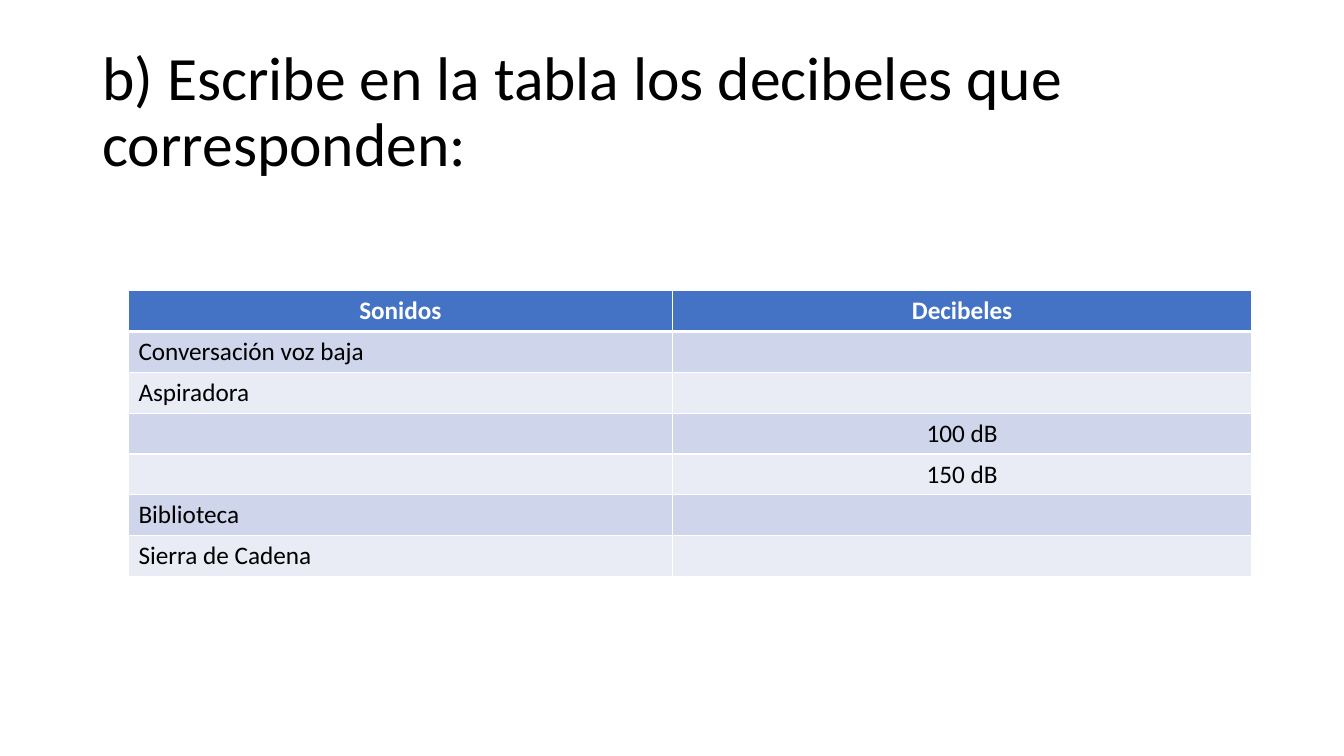
from lxml.etree import SubElement
from pptx import Presentation
from pptx.dml.color import RGBColor
from pptx.enum.text import MSO_ANCHOR, PP_ALIGN
from pptx.oxml.ns import qn
from pptx.util import Pt

FONT = "Calibri"
WHITE, BLACK = "FFFFFF", "000000"
HEADER_FILL = "4472C4"
BAND_FILLS = ("CFD5EA", "E9EBF5")
SOUNDS = [
    ("Sonidos", "Decibeles"),
    ("Conversación voz baja", ""),
    ("Aspiradora", ""),
    ("", "100 dB"),
    ("", "150 dB"),
    ("Biblioteca", ""),
    ("Sierra de Cadena", ""),
]


def color(value):
    return RGBColor.from_string(value)


def add_run(paragraph, text, size, text_color, bold=False):
    run = paragraph.add_run()
    run.text = text
    run.font.name = FONT
    run.font.size = Pt(size)
    run.font.bold = bold
    run.font.color.rgb = color(text_color)


def set_borders(cell, bottom_width):
    """Draw white cell borders, 1 pt wide except at the bottom."""
    properties = cell._tc.get_or_add_tcPr()
    for side, width in (("L", 1), ("R", 1), ("T", 1), ("B", bottom_width)):
        line = SubElement(properties, qn(f"a:ln{side}"), w=str(Pt(width)))
        fill = SubElement(line, qn("a:solidFill"))
        SubElement(fill, qn("a:srgbClr"), val=WHITE)


def add_title(slide, left, top, width, height):
    frame = slide.shapes.add_textbox(Pt(left), Pt(top), Pt(width), Pt(height)).text_frame
    frame.word_wrap = True
    frame.vertical_anchor = MSO_ANCHOR.MIDDLE
    paragraph = frame.paragraphs[0]
    paragraph.line_spacing = 0.9
    add_run(paragraph, "b) Escribe en la tabla los decibeles que corresponden:", 44, BLACK)


def add_sound_table(slide, left, top, column_widths, row_height):
    table = slide.shapes.add_table(
        len(SOUNDS), len(column_widths), Pt(left), Pt(top),
        Pt(sum(column_widths)), Pt(row_height * len(SOUNDS)),
    ).table
    for column, width in zip(table.columns, column_widths):
        column.width = Pt(width)
    for row_index, texts in enumerate(SOUNDS):
        table.rows[row_index].height = Pt(row_height)
        is_header = row_index == 0
        for column_index, text in enumerate(texts):
            cell = table.cell(row_index, column_index)
            set_borders(cell, 3 if is_header else 1)
            cell.fill.solid()
            cell.fill.fore_color.rgb = color(
                HEADER_FILL if is_header else BAND_FILLS[(row_index - 1) % 2])
            if text:
                paragraph = cell.text_frame.paragraphs[0]
                centered = is_header or column_index == 1
                paragraph.alignment = PP_ALIGN.CENTER if centered else PP_ALIGN.LEFT
                add_run(paragraph, text, 18, WHITE if is_header else BLACK, is_header)


def main():
    presentation = Presentation()
    presentation.slide_width, presentation.slide_height = Pt(960), Pt(540)
    slide = presentation.slides.add_slide(presentation.slide_layouts[6])
    add_title(slide, 66, 28.75, 828, 104.4)
    add_sound_table(slide, 91.75, 207.5, (388.5, 414), 29.2)
    presentation.save("out.pptx")


if __name__ == "__main__":
    main()
